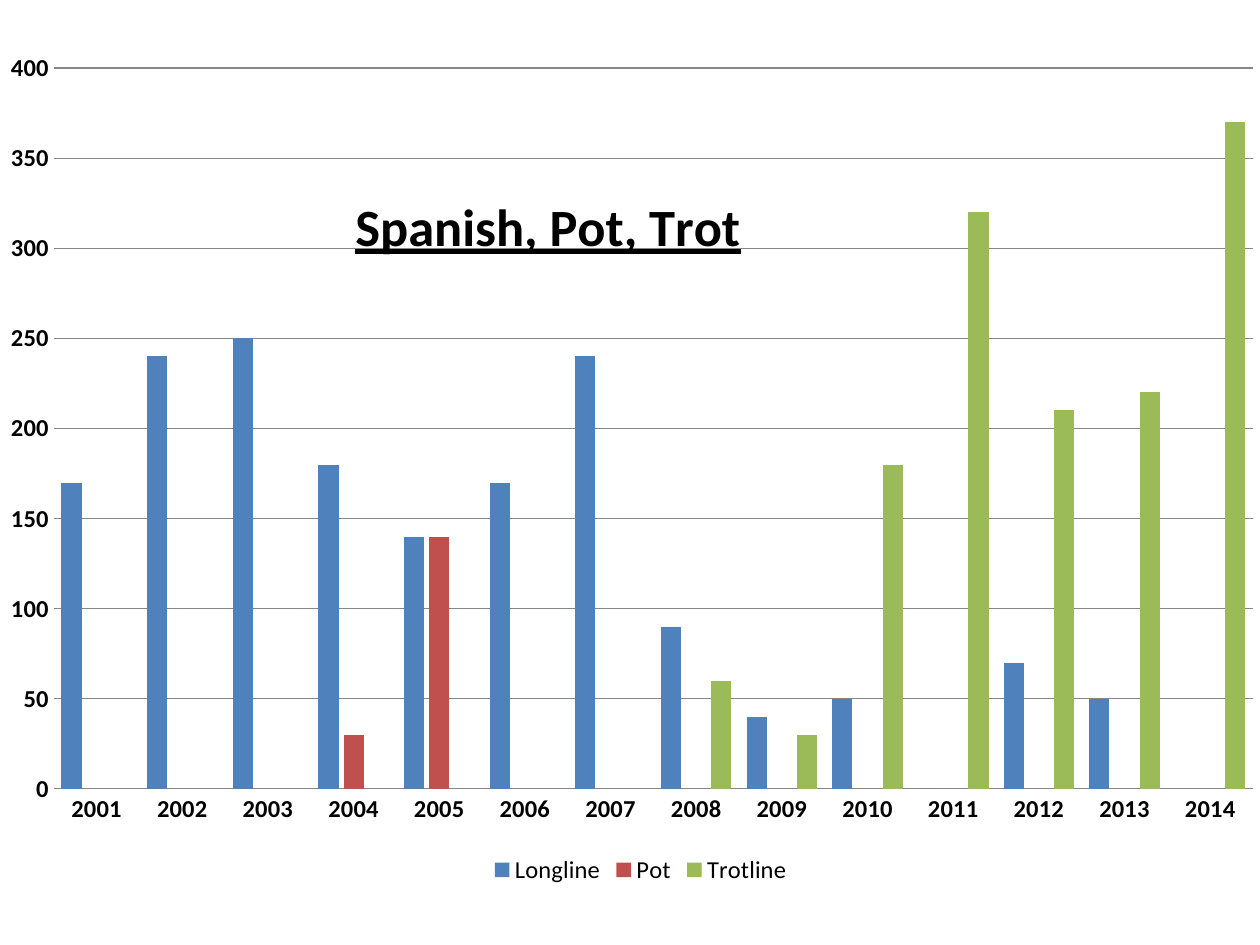
from dataclasses import dataclass

from pptx import Presentation
from pptx.chart.data import CategoryChartData
from pptx.dml.color import RGBColor
from pptx.enum.chart import XL_CHART_TYPE, XL_LEGEND_POSITION, XL_TICK_MARK
from pptx.oxml import parse_xml
from pptx.oxml.ns import nsdecls, qn
from pptx.util import Cm, Pt


@dataclass(frozen=True)
class Theme:
    font: str = "Calibri"
    ink: str = "000000"
    grid: str = "868686"
    fills: tuple = ("4F81BD", "C0504D", "9BBB59")
    title: int = 30
    label: int = 14
    base: int = 10


THEME = Theme()
YEARS = [str(year) for year in range(2001, 2015)]
CATCH = {
    "Longline": [170, 240, 250, 180, 140, 170, 240, 90, 40, 50, 0, 70, 50, None],
    "Pot": [None] * 3 + [30, 140] + [None] * 9,
    "Trotline": [None] * 7 + [60, 30, 180, 320, 210, 220, 370],
}


def color(code):
    return RGBColor.from_string(code)


def style(font, size, bold=False, underline=False):
    font.name = THEME.font
    font.size = Pt(size)
    font.bold = bold
    font.underline = underline
    font.color.rgb = color(THEME.ink)


def write(frame, text, **format):
    run = frame.paragraphs[0].add_run()
    run.text = text
    style(run.font, **format)


def place(node, index, inner=False, **spots):
    for old in node.findall(qn("c:layout")):
        node.remove(old)
    target = '<c:layoutTarget val="inner"/>' if inner else ""
    modes = "".join(f'<c:{key}Mode val="edge"/>' for key in "xy")
    sizes = "".join(f'<c:{key} val="{value}"/>' for key, value in spots.items())
    node.insert(index, parse_xml(
        f'<c:layout {nsdecls("c")}><c:manualLayout>'
        f"{target}{modes}{sizes}</c:manualLayout></c:layout>"))


def add_chart(slide):
    data = CategoryChartData(number_format="0")
    data.categories = YEARS
    for name, values in CATCH.items():
        data.add_series(name, values)
    frame = slide.shapes.add_chart(
        XL_CHART_TYPE.COLUMN_CLUSTERED, Cm(0), Cm(1.07), Cm(25.83), Cm(16.87), data)
    chart = frame.chart
    style(chart.font, THEME.base)
    return chart


def set_bars(chart):
    plot = chart.plots[0]
    plot.gap_width = 75
    plot.overlap = -25
    plot.vary_by_categories = False
    for series, fill in zip(plot.series, THEME.fills):
        series.format.fill.solid()
        series.format.fill.fore_color.rgb = color(fill)
    area = chart._chartSpace.chart.plotArea
    place(area, 0, inner=True, x=0.042, y=0.015, w=0.936, h=0.864)


def set_line(line):
    line.color.rgb = color(THEME.grid)
    line.width = Pt(0.75)


def set_axes(chart):
    years, counts = chart.category_axis, chart.value_axis
    for axis in (years, counts):
        axis.major_tick_mark = axis.minor_tick_mark = XL_TICK_MARK.NONE
        style(axis.tick_labels.font, THEME.label, bold=True)
    set_line(years.format.line)
    counts.format.line.fill.background()
    counts.minimum_scale = 0
    counts.maximum_scale = 400
    counts.major_unit = 50
    counts.has_major_gridlines = True
    set_line(counts.major_gridlines.format.line)


def set_title(chart):
    chart.has_title = True
    title = chart.chart_title
    write(title.text_frame, "Spanish, Pot, Trot",
          size=THEME.title, bold=True, underline=True)
    node = title._element
    place(node, 1, x=0.27, y=0.15)
    node.find(qn("c:overlay")).set("val", "1")


def set_legend(chart):
    chart.has_legend = True
    chart.legend.position = XL_LEGEND_POSITION.BOTTOM
    chart.legend.include_in_layout = False
    style(chart.legend.font, THEME.label)


def main():
    deck = Presentation()
    deck.slide_width = Cm(25.4)
    deck.slide_height = Cm(19.05)
    slide = deck.slides.add_slide(deck.slide_layouts[6])
    chart = add_chart(slide)
    set_bars(chart)
    set_axes(chart)
    set_title(chart)
    set_legend(chart)
    deck.save("out.pptx")


if __name__ == "__main__":
    main()
